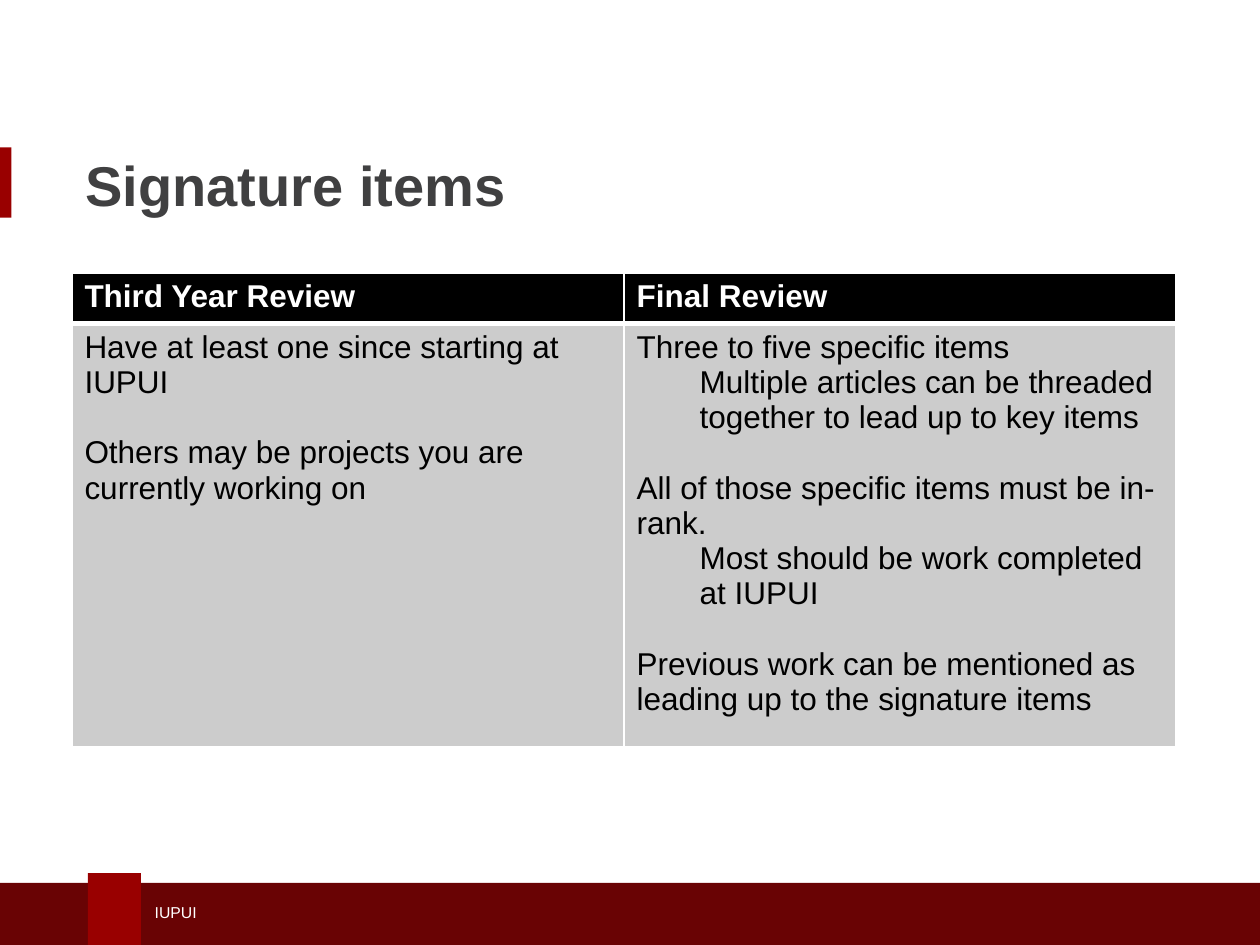
from lxml.etree import SubElement
from pptx import Presentation
from pptx.dml.color import RGBColor
from pptx.enum.shapes import MSO_SHAPE
from pptx.enum.text import MSO_ANCHOR, PP_ALIGN
from pptx.oxml.ns import qn
from pptx.util import Cm, Pt

CRIMSON = RGBColor(0x99, 0x00, 0x00)
DARK_CRIMSON = RGBColor(0x69, 0x03, 0x04)
CHARCOAL = RGBColor(0x40, 0x40, 0x41)
BLACK = RGBColor(0x00, 0x00, 0x00)
GRAY = RGBColor(0xCC, 0xCC, 0xCC)
WHITE = RGBColor(0xFF, 0xFF, 0xFF)
FONT = "Arial"

HEADINGS = ["Third Year Review", "Final Review"]
REVIEW_ITEMS = [
    [
        ("Have at least one since starting at IUPUI", []),
        ("Others may be projects you are currently working on", []),
    ],
    [
        (
            "Three to five specific items",
            ["Multiple articles can be threaded together to lead up to key items"],
        ),
        (
            "All of those specific items must be in-rank.",
            ["Most should be work completed at IUPUI"],
        ),
        ("Previous work can be mentioned as leading up to the signature items", []),
    ],
]


def write_text(paragraph, text, size=18, color=BLACK, bold=False, level=0, before=0):
    """Write one left-aligned paragraph with its format."""
    paragraph.level = level
    if level:
        properties = paragraph._p.get_or_add_pPr()
        properties.set("marL", str(Cm(1.27) * level))
        properties.set("indent", "0")
    paragraph.alignment = PP_ALIGN.LEFT
    paragraph.space_before = Pt(before)
    run = paragraph.add_run()
    run.text = text
    run.font.name = FONT
    run.font.size = Pt(size)
    run.font.bold = bold
    run.font.color.rgb = color


def add_block(slide, left, top, width, height, color):
    """Add a plain filled rectangle."""
    shape = slide.shapes.add_shape(MSO_SHAPE.RECTANGLE, left, top, width, height)
    shape.shadow.inherit = False
    shape.fill.solid()
    shape.fill.fore_color.rgb = color
    shape.line.fill.background()


def set_borders(cell, **widths):
    """Give a cell white borders with the given widths in points."""
    properties = cell._tc.get_or_add_tcPr()
    for side in ("L", "R", "T", "B"):
        line = SubElement(properties, qn(f"a:ln{side}"), w=str(Pt(widths.get(side, 1))))
        fill = SubElement(line, qn("a:solidFill"))
        SubElement(fill, qn("a:srgbClr"), val=str(WHITE))


def format_cell(cell, color, **widths):
    """Set the borders and fill of a cell."""
    set_borders(cell, **widths)
    cell.fill.solid()
    cell.fill.fore_color.rgb = color


def add_title(slide, left, top, width, height):
    """Place the title and the accent at the slide's left edge."""
    add_block(slide, 0, top + Cm(0.15), Cm(0.23), Cm(1.42), CRIMSON)
    title = slide.shapes.title
    title.left, title.top, title.width, title.height = left, top, width, height
    frame = title.text_frame
    frame.vertical_anchor = MSO_ANCHOR.MIDDLE
    write_text(frame.paragraphs[0], "Signature items", size=32, color=CHARCOAL, bold=True)


def add_footer(slide, left, top, width, height):
    """Place the footer band with its tab and label."""
    add_block(slide, left, top, width, height, DARK_CRIMSON)
    add_block(slide, left + Cm(1.85), top - Cm(0.2), Cm(1.07), height + Cm(0.2), CRIMSON)
    label = slide.shapes.add_textbox(left + Cm(2.95), top + Cm(0.26), Cm(10.03), Cm(0.64))
    frame = label.text_frame
    frame.word_wrap = True
    frame.vertical_anchor = MSO_ANCHOR.MIDDLE
    write_text(frame.paragraphs[0], "IUPUI", size=9, color=WHITE)


def fill_review_cell(cell, items):
    """Write items and their indented details, with a gap between items."""
    frame = cell.text_frame
    for index, (item, details) in enumerate(items):
        paragraph = frame.add_paragraph() if index else frame.paragraphs[0]
        write_text(paragraph, item, before=20 if index else 0)
        for detail in details:
            write_text(frame.add_paragraph(), detail, level=1)


def add_review_table(slide, left, top, width, height):
    """Place the table that compares the two reviews."""
    table = slide.shapes.add_table(2, len(HEADINGS), left, top, width, height).table
    table.rows[0].height = Cm(1.02)
    table.rows[1].height = height - Cm(1.02)
    for column, (heading, items) in enumerate(zip(HEADINGS, REVIEW_ITEMS)):
        header, body = table.cell(0, column), table.cell(1, column)
        format_cell(header, BLACK, B=3)
        format_cell(body, GRAY, T=3)
        write_text(header.text_frame.paragraphs[0], heading, color=WHITE, bold=True)
        fill_review_cell(body, items)


def main():
    """Build and save the presentation."""
    presentation = Presentation()
    presentation.slide_width, presentation.slide_height = Cm(25.4), Cm(19.05)
    slide = presentation.slides.add_slide(presentation.slide_layouts[5])
    add_footer(slide, Cm(-0.08), Cm(17.8), Cm(25.63), Cm(1.27))
    add_title(slide, Cm(1.47), Cm(2.82), Cm(22.23), Cm(1.78))
    add_review_table(slide, Cm(1.45), Cm(5.5), Cm(22.26), Cm(9.08))
    presentation.save("out.pptx")


if __name__ == "__main__":
    main()
